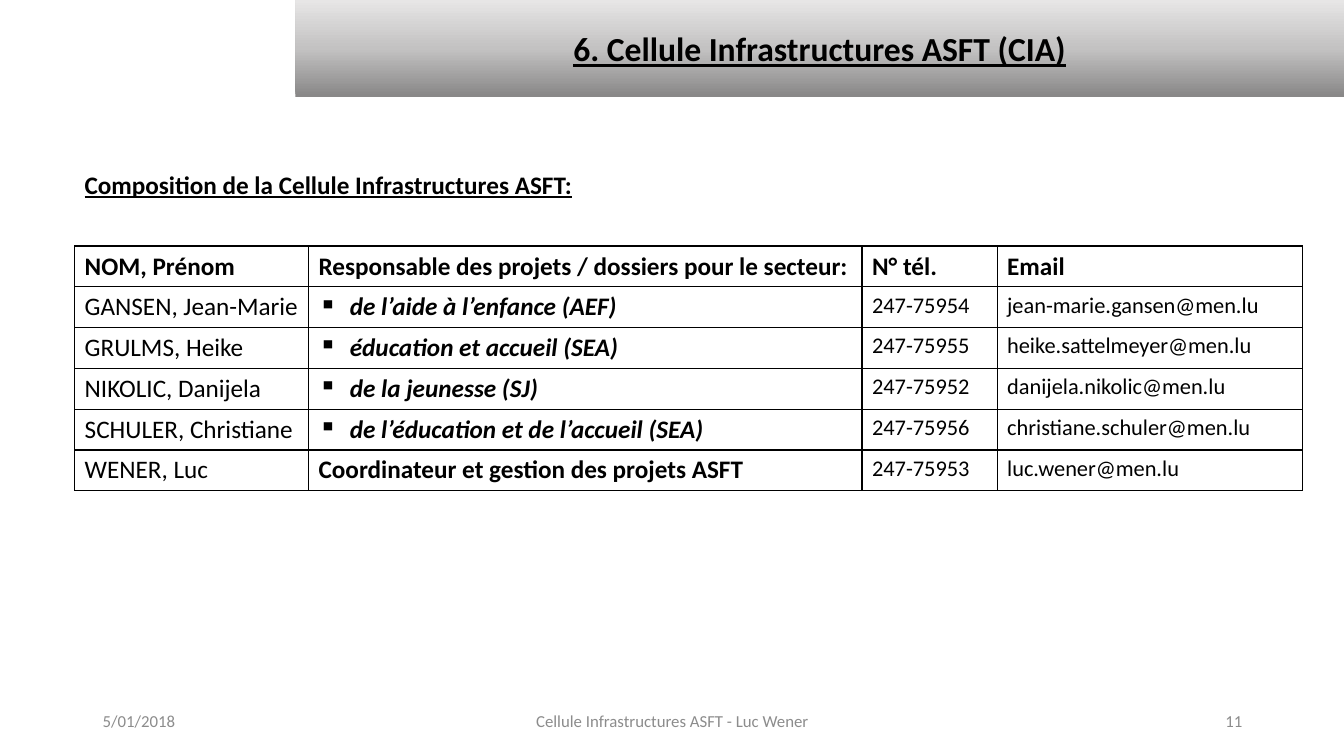
import pptx
import pptx.dml.color
import pptx.enum.shapes
import pptx.enum.text
import pptx.oxml
import pptx.oxml.ns
import pptx.util
from pptx.util import Inches

COLORS = {
    "text": "000000",
    "footer": "8C8C8C",
    "banner_dark": "898888",
    "banner_middle": "C3C2C2",
    "banner_light": "E7E6E6",
    "border": "000000",
}

# Text formats
HEADING = {"size": 18, "bold": True, "underline": True}
TITLE = {**HEADING, "size": 24}
FOOTER = {"size": 12, "color": "footer"}
HEADER = {"size": 18, "bold": True}
NAME = {"size": 18}
SECTOR = {"size": 18, "bold": True, "italic": True}
CONTACT = {"size": 16}

ALIGN = pptx.enum.text.PP_ALIGN
MIDDLE = pptx.enum.text.MSO_ANCHOR.MIDDLE

# Table content
COLUMN_WIDTHS = [2.32, 5.49, 1.34, 3.03]
ROW_HEIGHT = 0.405
HEADERS = ["NOM, Prénom", "Responsable des projets / dossiers pour le secteur:", "N° tél.", "Email"]
MEMBERS = [
    ["GANSEN, Jean-Marie", "de l’aide à l’enfance (AEF)", "247-75954", "jean-marie.gansen@men.lu"],
    ["GRULMS, Heike", "éducation et accueil (SEA)", "247-75955", "heike.sattelmeyer@men.lu"],
    ["NIKOLIC, Danijela", "de la jeunesse (SJ)", "247-75952", "danijela.nikolic@men.lu"],
    ["SCHULER, Christiane", "de l’éducation et de l’accueil (SEA)", "247-75956", "christiane.schuler@men.lu"],
]
COORDINATOR = ["WENER, Luc", "Coordinateur et gestion des projets ASFT", "247-75953", "luc.wener@men.lu"]


def parse_element(tag, content):
    namespace = pptx.oxml.ns.nsdecls("a")
    return pptx.oxml.parse_xml(f"<a:{tag} {namespace}{content}")


def write_text(text_frame, text, text_format, align=ALIGN.LEFT):
    paragraph = text_frame.paragraphs[0]
    paragraph.alignment = align
    run = paragraph.add_run()
    run.text = text
    settings = {"name": "Calibri", "bold": False, "italic": False, **text_format}
    color = COLORS[settings.pop("color", "text")]
    settings["size"] = pptx.util.Pt(settings["size"])
    for attribute, value in settings.items():
        setattr(run.font, attribute, value)
    run.font.color.rgb = pptx.dml.color.RGBColor.from_string(color)
    return paragraph


def add_text(slide, box, text, text_format, align=ALIGN.LEFT, anchor=MIDDLE):
    shape = slide.shapes.add_textbox(*map(Inches, box))
    shape.text_frame.word_wrap = True
    shape.text_frame.vertical_anchor = anchor
    write_text(shape.text_frame, text, text_format, align)


def add_banner(slide, box, text):
    shape = slide.shapes.add_shape(pptx.enum.shapes.MSO_SHAPE.RECTANGLE, *map(Inches, box))
    shape.shadow.inherit = False
    shape.line.fill.background()

    # Gradient from dark at the bottom to light at the top
    shape.fill.gradient()
    shape.fill.gradient_angle = 90
    stop_list = shape.element.spPr.find(".//" + pptx.oxml.ns.qn("a:gsLst"))
    for stop in list(stop_list):
        stop_list.remove(stop)
    for position, name in [(1, "banner_dark"), (50, "banner_middle"), (100, "banner_light")]:
        stop_list.append(parse_element(
            "gs", f' pos="{position * 1000}"><a:srgbClr val="{COLORS[name]}"/></a:gs>'))

    shape.text_frame.word_wrap = True
    shape.text_frame.vertical_anchor = MIDDLE
    write_text(shape.text_frame, text, TITLE, ALIGN.CENTER)


def add_bullet(paragraph):
    properties = paragraph._p.get_or_add_pPr()
    properties.set("marL", str(Inches(0.31)))
    properties.set("indent", str(-Inches(0.31)))
    properties.append(parse_element("buChar", ' char="▪"/>'))


def add_borders(cell):
    properties = cell._tc.get_or_add_tcPr()
    for index, side in enumerate(["lnL", "lnR", "lnT", "lnB"]):
        properties.insert(index, parse_element(
            side, f' w="{pptx.util.Pt(1)}"><a:solidFill><a:srgbClr val="{COLORS["border"]}"/>'
                  f'</a:solidFill></a:{side}>'))


def add_member_table(slide, left, top):
    member_formats = [NAME, SECTOR, CONTACT, CONTACT]
    rows = [(HEADERS, [HEADER] * len(HEADERS))]
    rows += [(member, member_formats) for member in MEMBERS]
    rows.append((COORDINATOR, [NAME, HEADER, CONTACT, CONTACT]))

    table = slide.shapes.add_table(
        len(rows), len(COLUMN_WIDTHS), Inches(left), Inches(top),
        Inches(sum(COLUMN_WIDTHS)), Inches(ROW_HEIGHT * len(rows))).table
    table.first_row = table.horz_banding = False
    for column, width in zip(table.columns, COLUMN_WIDTHS):
        column.width = Inches(width)
    for row_index, (texts, formats) in enumerate(rows):
        table.rows[row_index].height = Inches(ROW_HEIGHT)
        for column_index, (text, text_format) in enumerate(zip(texts, formats)):
            cell = table.cell(row_index, column_index)
            cell.fill.background()
            add_borders(cell)
            paragraph = write_text(cell.text_frame, text, text_format)
            if text_format is SECTOR:
                add_bullet(paragraph)


def main():
    presentation = pptx.Presentation()
    presentation.slide_width = Inches(13.33)
    presentation.slide_height = Inches(7.5)
    slide = presentation.slides.add_slide(presentation.slide_layouts[6])

    # Title and heading
    add_banner(slide, (2.93, 0, 10.4, 0.96), "6. Cellule Infrastructures ASFT (CIA)")
    add_text(slide, (0.74, 1.63, 11.35, 0.4), "Composition de la Cellule Infrastructures ASFT:",
             HEADING, anchor=pptx.enum.text.MSO_ANCHOR.TOP)

    # Members
    add_member_table(slide, 0.74, 2.44)

    # Footer
    for left, width, text, align in [
        (0.92, 3, "5/01/2018", ALIGN.LEFT),
        (4.42, 4.5, "Cellule Infrastructures ASFT - Luc Wener", ALIGN.CENTER),
        (9.42, 3, "11", ALIGN.RIGHT),
    ]:
        add_text(slide, (left, 6.95, width, 0.4), text, FOOTER, align)

    presentation.save("out.pptx")


if __name__ == "__main__":
    main()
